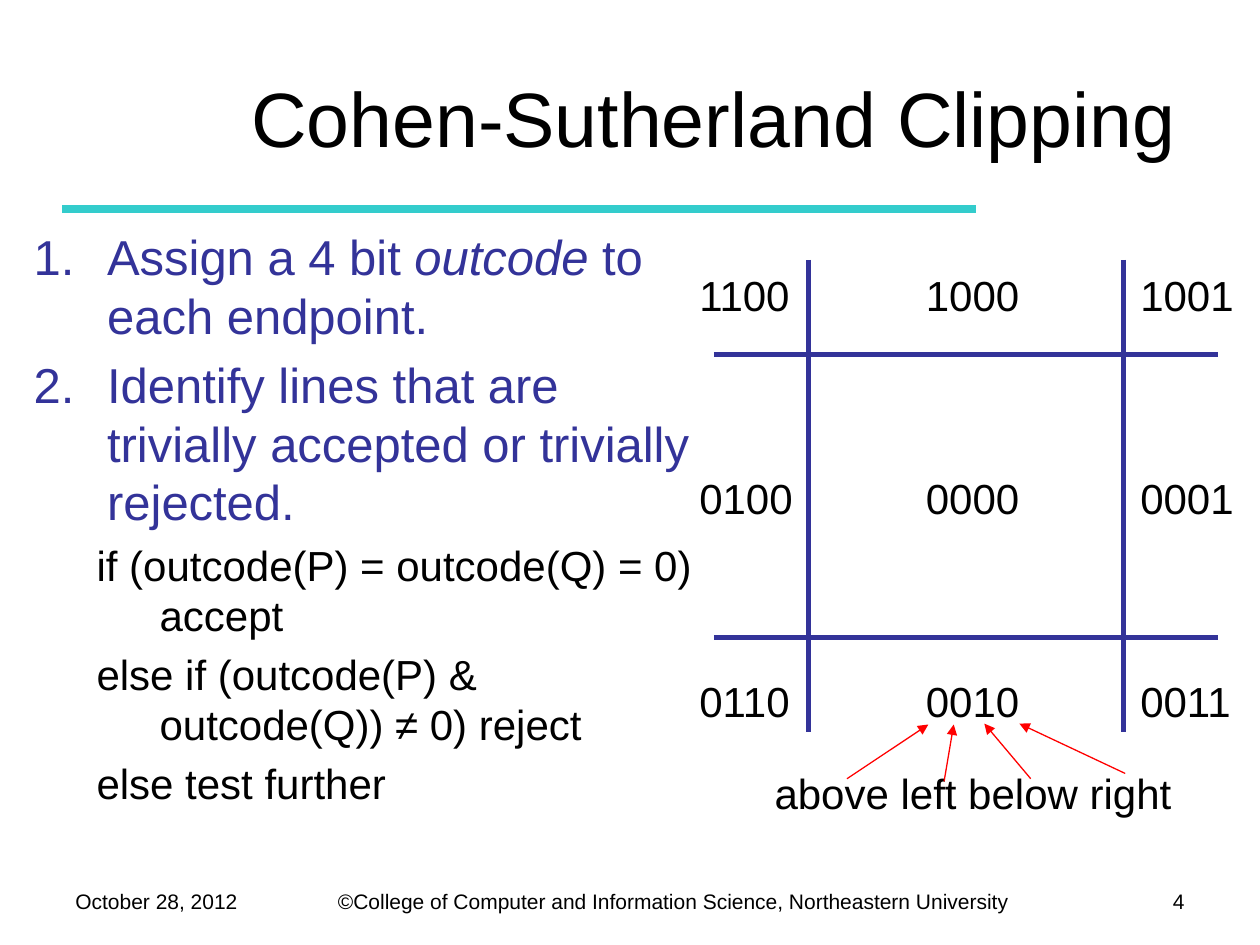
from lxml import etree
from pptx import Presentation
from pptx.dml.color import RGBColor
from pptx.enum import shapes, text
from pptx.oxml import ns
from pptx.util import Pt

BLACK = RGBColor(0x00, 0x00, 0x00)
INDIGO = RGBColor(0x33, 0x33, 0x99)
TEAL = RGBColor(0x33, 0xCC, 0xCC)
RED = RGBColor(0xFF, 0x00, 0x00)
FONT = "Arial"

deck = Presentation()
deck.slide_width, deck.slide_height = Pt(720), Pt(540)
page = deck.slides.add_slide(deck.slide_layouts[1])


def add_label(words, left, top, width, height, size, align=text.PP_ALIGN.LEFT):
    box = page.shapes.add_textbox(Pt(left), Pt(top), Pt(width), Pt(height))
    box.text_frame.word_wrap = True
    box.text_frame.text = words
    para = box.text_frame.paragraphs[0]
    para.alignment = align
    para.font.name, para.font.size = FONT, Pt(size)
    para.font.color.rgb = BLACK


def add_line(x1, y1, x2, y2, color, width, arrow=False):
    line = page.shapes.add_connector(
        shapes.MSO_CONNECTOR.STRAIGHT, Pt(x1), Pt(y1), Pt(x2), Pt(y2))
    line.line.color.rgb, line.line.width = color, Pt(width)
    if arrow:
        etree.SubElement(line.line._get_or_add_ln(), ns.qn("a:tailEnd"), type="triangle")
    etree.SubElement(line._element.spPr, ns.qn("a:effectLst"))


# Title and rule
title = page.shapes.title
title.left, title.top, title.width, title.height = Pt(132), Pt(21.6), Pt(552), Pt(90)
title.text_frame.text = "Cohen-Sutherland Clipping"
title.text_frame.auto_size = text.MSO_AUTO_SIZE.NONE
title.text_frame.vertical_anchor = text.MSO_ANCHOR.MIDDLE
heading = title.text_frame.paragraphs[0]
heading.alignment = text.PP_ALIGN.CENTER
heading.font.name, heading.font.size = FONT, Pt(44)
heading.font.color.rgb = BLACK
add_line(35.5, 119.6, 557.5, 119.6, TEAL, 4.5)

# Algorithm steps: (level, runs); every second run is italic
steps = [
    (0, ["Assign a 4 bit ", "outcode", " to each endpoint."]),
    (0, ["Identify lines that are trivially accepted or trivially rejected."]),
    (1, ["if (outcode(P) = outcode(Q) = 0) accept"]),
    (1, ["else if (outcode(P) & outcode(Q)) ≠ 0) reject"]),
    (1, ["else test further"]),
]
body = page.placeholders[1]
body.left, body.top, body.width, body.height = Pt(12), Pt(126), Pt(392), Pt(356)
frame = body.text_frame
frame.auto_size = text.MSO_AUTO_SIZE.NONE
for index, (level, parts) in enumerate(steps):
    para = frame.paragraphs[0] if index == 0 else frame.add_paragraph()
    para.level = level
    size = 24 if level else 28
    para.space_before = Pt(0.2 * size if index else 0)
    props = para._p.get_or_add_pPr()
    margin, indent = (72, -36) if level else (42, -42)
    props.set("marL", str(Pt(margin)))
    props.set("indent", str(Pt(indent)))
    if level:
        etree.SubElement(props, ns.qn("a:buNone"))
    else:
        etree.SubElement(props, ns.qn("a:buFont"), typeface=FONT)
        etree.SubElement(props, ns.qn("a:buAutoNum"), type="arabicPeriod")
    para.font.name, para.font.size = FONT, Pt(size)
    para.font.color.rgb = BLACK if level else INDIGO
    for position, part in enumerate(parts):
        span = para.add_run()
        span.text = part
        span.font.name, span.font.size = FONT, Pt(size)
        span.font.color.rgb = BLACK if level else INDIGO
        if position % 2:
            span.font.italic = True

# Clipping window and region outcodes
for x in (462, 642):
    add_line(x, 148.5, x, 418.5, INDIGO, 3)
for y in (202.5, 364.5):
    add_line(408, y, 696, y, INDIGO, 3)

outcodes = [
    ["1100", "1000", "1001"],
    ["0100", "0000", "0001"],
    ["0110", "0010", "0011"],
]
for row, codes in enumerate(outcodes):
    for left, code in zip((392.5, 522, 644.5), codes):
        add_label(code, left, 150.5 + 116 * row, 70.5, 36, 24)

# Meaning of each bit
add_label("above left below right", 424, 435, 264, 36, 24, text.PP_ALIGN.CENTER)
bit_arrows = [
    (484, 445, 530.5, 414),
    (539.5, 446.5, 545, 414),
    (589, 445, 562.5, 413.5),
    (643, 442, 582.5, 413.5),
]
for ends in bit_arrows:
    add_line(*ends, RED, 0.75, arrow=True)

# Footer
add_label("October 28, 2012", 36, 504, 126, 24, 12)
add_label("©College of Computer and Information Science, Northeastern University",
          186, 504, 407.5, 22, 12)
add_label("4", 624, 504, 60, 25, 12, text.PP_ALIGN.RIGHT)

deck.save("out.pptx")
